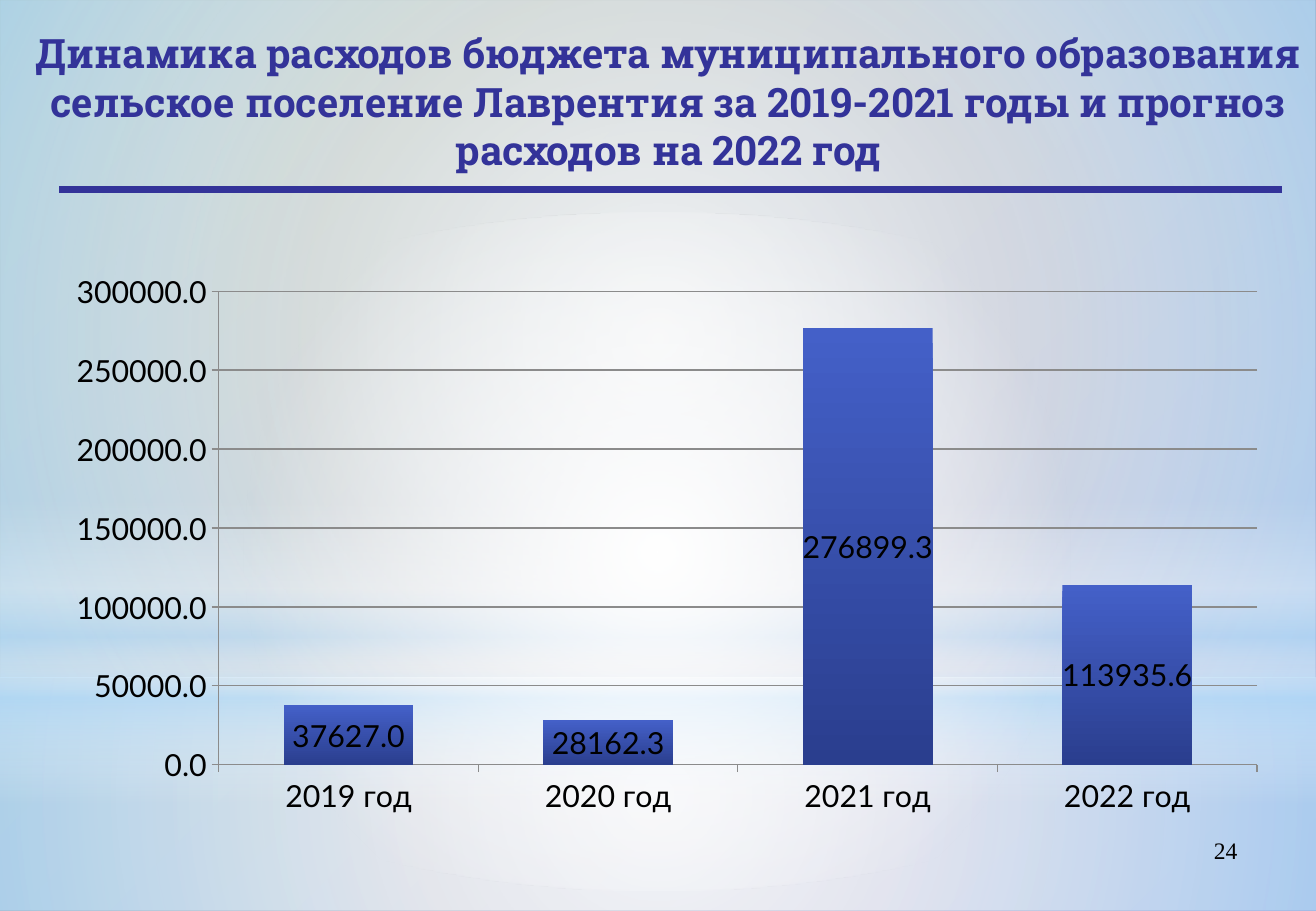
from pptx import Presentation, oxml
from pptx.chart.data import CategoryChartData
from pptx.dml.color import RGBColor
from pptx.enum import chart as chart_enum, shapes, text
from pptx.oxml import ns
from pptx.util import Cm, Pt

COLORS = {
    "title": "333399",
    "text": "000000",
    "axis": "8B8B8B",
    "bar_top": "4460C8",
    "bar_bottom": "2A3E8E",
    "background_start": "96AB94",
    "background_end": "8488C4",
    "white": "FFFFFF",
    "sky": "B4DCFA",
}
TITLE = ("Динамика расходов бюджета муниципального образования сельское "
         "поселение Лаврентия за 2019-2021 годы и прогноз расходов на 2022 год")
EXPENSES = {"2019 год": 37627.0, "2020 год": 28162.3,
            "2021 год": 276899.3, "2022 год": 113935.6}
WIDTH, HEIGHT = 27.53, 19.05
HORIZON = 14.17
LINEAR = '<a:lin ang="5400000" scaled="0"/>'
RADIAL = ('<a:path path="circle"><a:fillToRect l="50000" t="50000" '
          'r="50000" b="50000"/></a:path>')


def color(name):
    return RGBColor.from_string(COLORS[name])


def write_text(frame, content, size, font, tone="text", bold=False,
               align=text.PP_ALIGN.LEFT, anchor=text.MSO_ANCHOR.TOP):
    frame.word_wrap = True
    frame.auto_size = text.MSO_AUTO_SIZE.NONE
    frame.vertical_anchor = anchor
    paragraph = frame.paragraphs[0]
    paragraph.alignment = align
    run = paragraph.add_run()
    run.text = content
    run.font.size = Pt(size)
    run.font.name = font
    run.font.bold = bold
    run.font.color.rgb = color(tone)


def set_gradient(fill, start, end, angle):
    fill.gradient()
    fill.gradient_angle = angle
    for stop, name in zip(fill.gradient_stops, (start, end)):
        stop.color.rgb = color(name)


def add_glow(slide, kind, top, height, stops, direction):
    """Add a full-width shape filled with (position, colour, opacity) stops."""
    shape = slide.shapes.add_shape(kind, Cm(0), Cm(top), Cm(WIDTH), Cm(height))
    shape.shadow.inherit = False
    shape.line.fill.background()
    shape.fill.background()
    stop_xml = "".join(
        f'<a:gs pos="{position * 1000}"><a:srgbClr val="{COLORS[name]}">'
        f'<a:alpha val="{opacity * 1000}"/></a:srgbClr></a:gs>'
        for position, name, opacity in stops)
    gradient = oxml.parse_xml(
        f'<a:gradFill {ns.nsdecls("a")} rotWithShape="1">'
        f'<a:gsLst>{stop_xml}</a:gsLst>{direction}</a:gradFill>')
    properties = shape._element.spPr
    properties.replace(properties.find(ns.qn("a:noFill")), gradient)


def add_backdrop(slide):
    set_gradient(slide.background.fill, "background_start", "background_end", 315)
    rectangle, oval = shapes.MSO_SHAPE.RECTANGLE, shapes.MSO_SHAPE.OVAL
    add_glow(slide, rectangle, HORIZON, HEIGHT - HORIZON,
             [(0, "white", 91), (37, "white", 76), (100, "sky", 79)], RADIAL)
    add_glow(slide, rectangle, 0, HORIZON,
             [(0, "white", 89), (48, "white", 62), (100, "sky", 79)], RADIAL)
    add_glow(slide, rectangle, 10.46, 6.35,
             [(0, "white", 0), (29, "white", 30), (45, "sky", 40),
              (55, "white", 26), (65, "sky", 60), (100, "white", 0)], LINEAR)
    add_glow(slide, oval, 4.45, HORIZON,
             [(0, "white", 100), (56, "white", 0)], RADIAL)


def add_title(slide):
    title = slide.shapes.title
    title._element.getparent().append(title._element)  # bring above the backdrop
    title.left, title.top = Cm(0.46), Cm(0.33)
    title.width, title.height = Cm(27.05), Cm(3.56)
    frame = title.text_frame
    frame.margin_left = frame.margin_right = 0
    frame.margin_top = frame.margin_bottom = 0
    write_text(frame, TITLE, 24, "Roboto Slab", tone="title", bold=True,
               align=text.PP_ALIGN.CENTER, anchor=text.MSO_ANCHOR.MIDDLE)


def add_rule(slide):
    rule = slide.shapes.add_connector(
        shapes.MSO_CONNECTOR.STRAIGHT, Cm(1.24), Cm(3.96), Cm(26.82), Cm(3.96))
    rule.line.color.rgb = color("title")
    rule.line.width = Pt(3.75)
    rule._element.spPr.append(oxml.parse_xml(f'<a:effectLst {ns.nsdecls("a")}/>'))


def set_plot_area(chart, **fractions):
    """Fix the inner plot area as x, y, w, h fractions of the chart."""
    area = chart._chartSpace.chart.plotArea
    for layout in area.findall(ns.qn("c:layout")):
        area.remove(layout)
    values = "".join(f'<c:{key} val="{value}"/>' for key, value in fractions.items())
    area.insert(0, oxml.parse_xml(
        f'<c:layout {ns.nsdecls("c")}><c:manualLayout>'
        '<c:layoutTarget val="inner"/><c:xMode val="edge"/><c:yMode val="edge"/>'
        f'{values}</c:manualLayout></c:layout>'))


def add_expense_chart(slide):
    data = CategoryChartData(number_format="0.0")
    data.categories = list(EXPENSES)
    data.add_series("Series 1", list(EXPENSES.values()))
    chart = slide.shapes.add_chart(
        chart_enum.XL_CHART_TYPE.COLUMN_STACKED,
        Cm(1.6), Cm(4.9), Cm(24.71), Cm(13.21), data).chart
    chart.has_title = False
    chart.has_legend = False
    chart.font.name = "Lato"
    chart.font.size = Pt(18)
    chart.font.color.rgb = color("text")
    set_plot_area(chart, x=0.12, y=0.09, w=0.88, h=0.75)

    plot = chart.plots[0]
    plot.gap_width = 100
    plot.overlap = 100
    plot.vary_by_categories = False
    set_gradient(plot.series[0].format.fill, "bar_top", "bar_bottom", 270)
    plot.has_data_labels = True
    labels = plot.data_labels
    labels.show_value = True
    labels.number_format = "0.0"
    labels.number_format_is_linked = False
    labels.position = chart_enum.XL_LABEL_POSITION.CENTER

    for axis in (chart.category_axis, chart.value_axis):
        axis.major_tick_mark = chart_enum.XL_TICK_MARK.OUTSIDE
        axis.minor_tick_mark = chart_enum.XL_TICK_MARK.NONE
        axis.format.line.color.rgb = color("axis")
    value_axis = chart.value_axis
    value_axis.minimum_scale = 0
    value_axis.maximum_scale = 300000
    value_axis.major_unit = 50000
    value_axis.has_major_gridlines = True
    value_axis.major_gridlines.format.line.color.rgb = color("axis")
    value_axis.tick_labels.number_format = "0.0"
    value_axis.tick_labels.number_format_is_linked = False


def add_page_number(slide):
    box = slide.shapes.add_textbox(Cm(19.71), Cm(17.35), Cm(6.43), Cm(1.32))
    write_text(box.text_frame, "24", 14, "Times New Roman",
               align=text.PP_ALIGN.RIGHT)


def main():
    presentation = Presentation()
    presentation.slide_width = Cm(WIDTH)
    presentation.slide_height = Cm(HEIGHT)
    title_only = presentation.slide_layouts.get_by_name("Title Only")
    slide = presentation.slides.add_slide(title_only)
    add_backdrop(slide)
    add_page_number(slide)
    add_title(slide)
    add_rule(slide)
    add_expense_chart(slide)
    presentation.save("out.pptx")


if __name__ == "__main__":
    main()
